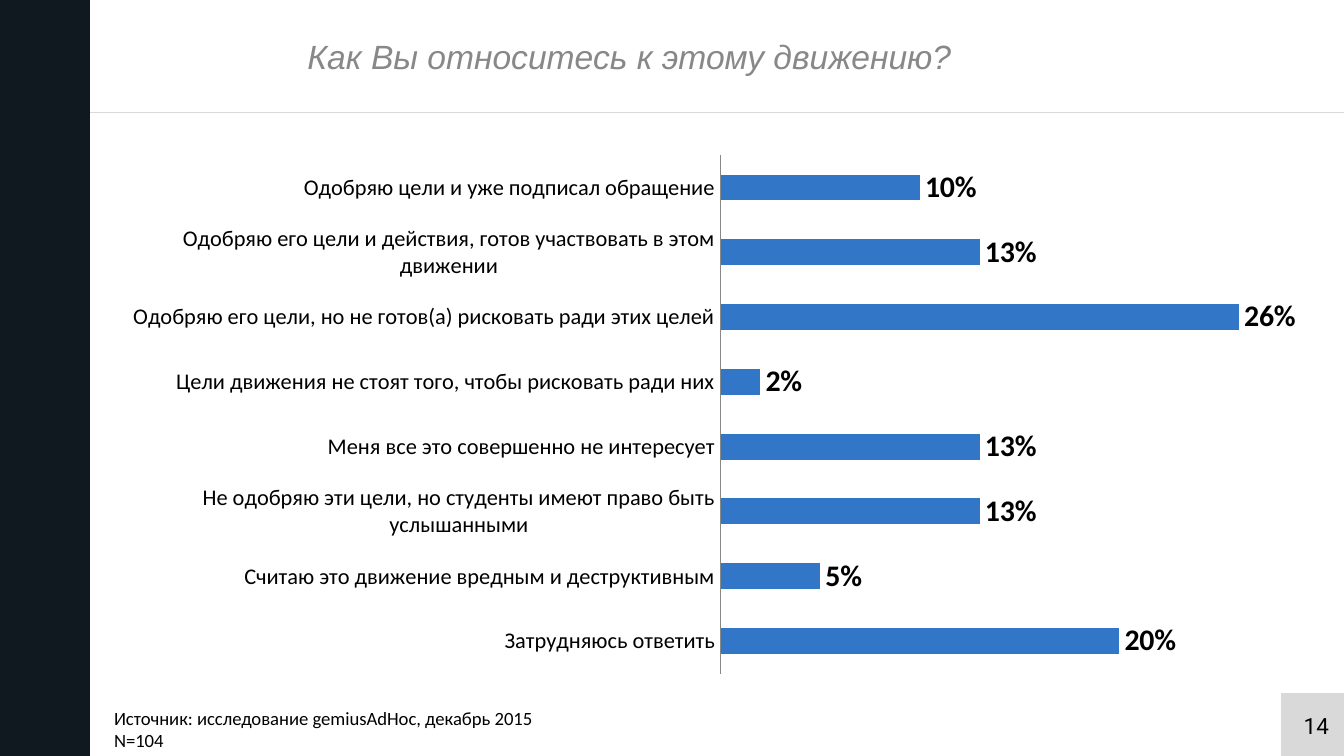
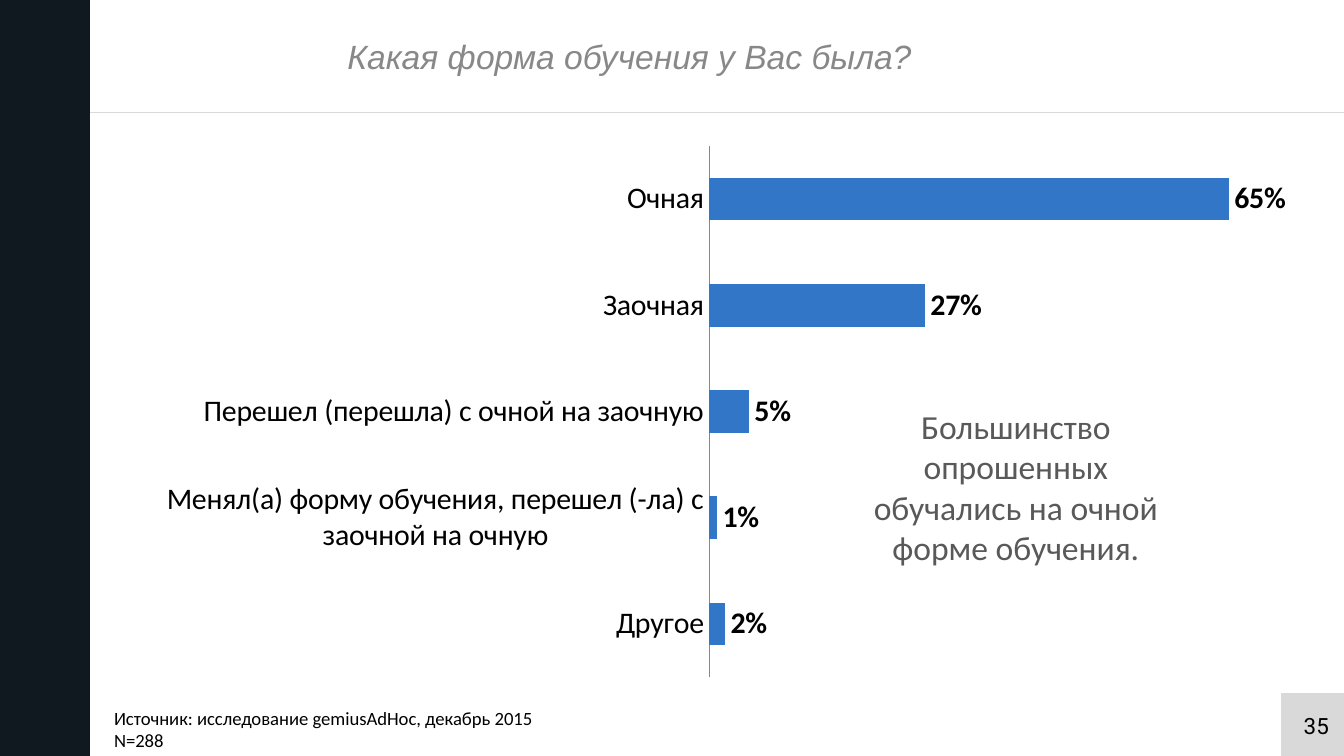
from lxml import etree
from pptx import Presentation
from pptx.chart.data import CategoryChartData
from pptx.dml.color import RGBColor
from pptx.enum.chart import XL_CHART_TYPE, XL_LABEL_POSITION, XL_TICK_MARK
from pptx.enum.shapes import MSO_CONNECTOR, MSO_SHAPE
from pptx.enum.text import MSO_ANCHOR, MSO_AUTO_SIZE, PP_ALIGN
from pptx.oxml import parse_xml
from pptx.oxml.ns import nsdecls, qn
from pptx.util import Pt

BARS = XL_CHART_TYPE.BAR_CLUSTERED
OUTSIDE = XL_LABEL_POSITION.OUTSIDE_END
NO_TICK = XL_TICK_MARK.NONE
STRAIGHT = MSO_CONNECTOR.STRAIGHT
RECT = MSO_SHAPE.RECTANGLE
PROCESS = MSO_SHAPE.FLOWCHART_PROCESS
MIDDLE = MSO_ANCHOR.MIDDLE
GROW = MSO_AUTO_SIZE.SHAPE_TO_FIT_TEXT
LEFT, CENTER, RIGHT = PP_ALIGN.LEFT, PP_ALIGN.CENTER, PP_ALIGN.RIGHT

WIDTH, HEIGHT = 720, 405
BAND, HEAD, TILE = 48.25, 60.5, 34
DARK, PALE, BLACK = "101820", "D9D9D9", "000000"
GREY, NOTE, BLUE = "888888", "595959", "3276C8"
SOURCE = "Источник: исследование gemiusAdHoc, декабрь 2015"
PERCENT = "####%"


def color(code):
    return RGBColor.from_string(code)


def points(box):
    return [Pt(value) for value in box]


def style(font, face, size, code):
    font.name, font.size = face, Pt(size)
    font.color.rgb = color(code)


def add_block(slide, kind, box, code):
    block = slide.shapes.add_shape(kind, *points(box))
    block.shadow.inherit = False
    block.fill.solid()
    block.fill.fore_color.rgb = color(code)
    block.line.fill.background()


def add_rule(slide, start, end):
    rule = slide.shapes.add_connector(STRAIGHT, *points(start + end))
    rule.line.color.rgb = color(PALE)
    rule.line.width = Pt(0.5)
    etree.SubElement(rule._element.spPr, qn("a:effectLst"))


def add_text(slide, box, lines, face, size, code, align=LEFT):
    frame = slide.shapes.add_textbox(*points(box)).text_frame
    frame.word_wrap = True
    frame.auto_size = GROW
    frame.text = "\n".join(lines)
    for line in frame.paragraphs:
        line.alignment = align
        style(line.font, face, size, code)


def add_title(slide, box, text):
    title = slide.shapes.title
    title.left, title.top, title.width, title.height = points(box)
    frame = title.text_frame
    frame.text = text
    frame.word_wrap = True
    frame.vertical_anchor = MIDDLE
    line = frame.paragraphs[0]
    line.alignment = CENTER
    style(line.font, "Arial", 18, GREY)
    line.font.italic = True


def place_plot(chart, plot):
    parts = "".join(f'<c:{tag}Mode val="edge"/>' for tag in "xy")
    parts += "".join(f'<c:{tag} val="{value}"/>' for tag, value in zip("xywh", plot))
    layout = parse_xml(
        f'<c:layout {nsdecls("c")}><c:manualLayout><c:layoutTarget val="inner"/>'
        f"{parts}</c:manualLayout></c:layout>")
    area = chart._chartSpace.chart.plotArea
    for old in area.findall(qn("c:layout")):
        area.remove(old)
    area.insert(0, layout)


def add_bars(slide, box, rows, plot, top, size):
    data = CategoryChartData(number_format=PERCENT)
    data.categories = [name for name, value in reversed(rows)]
    data.add_series("Series 1", [value / 100 for name, value in reversed(rows)])
    chart = slide.shapes.add_chart(BARS, *points(box), data).chart
    chart.has_legend = chart.has_title = False
    style(chart.font, "Calibri", 16, BLACK)

    names = chart.category_axis
    names.major_tick_mark = names.minor_tick_mark = NO_TICK
    names.format.line.color.rgb = color(GREY)
    names.format.line.width = Pt(0.75)
    style(names.tick_labels.font, "Calibri", size, BLACK)
    scale = chart.value_axis
    scale.visible = scale.has_major_gridlines = False
    scale.minimum_scale, scale.maximum_scale = 0, top

    group = chart.plots[0]
    group.gap_width, group.overlap = 150, -25
    group.vary_by_categories = False
    bars = group.series[0]
    bars.invert_if_negative = False
    bars.format.fill.solid()
    bars.format.fill.fore_color.rgb = color(BLUE)
    labels = bars.data_labels
    labels.show_value = True
    labels.number_format, labels.number_format_is_linked = PERCENT, False
    labels.position = OUTSIDE
    style(labels.font, "Calibri", 16, BLACK)
    labels.font.bold = True
    place_plot(chart, plot)


def add_page(deck, title, number, count):
    slide = deck.slides.add_slide(deck.slide_layouts[5])
    left, top = WIDTH - TILE, HEIGHT - TILE
    add_block(slide, RECT, (0, 0, BAND, HEIGHT), DARK)
    add_rule(slide, (BAND, HEAD), (WIDTH, HEAD))
    add_block(slide, PROCESS, (left, top, TILE, TILE), PALE)
    add_text(slide, (left, top + 7, TILE - 1, 30), [str(number)],
             "Roboto", 12, BLACK, RIGHT)
    add_title(slide, (82, 0, 510.5, HEAD), title)
    add_text(slide, (54, 375, 635, 32), [SOURCE, f"N={count}"],
             "Calibri", 10, BLACK)
    return slide


def add_views(deck):
    slide = add_page(deck, "Как Вы относитесь к этому движению?", 14, 104)
    rows = [
        ("Одобряю цели и уже подписал обращение", 10),
        ("Одобряю его цели и действия, готов участвовать в этом движении", 13),
        ("Одобряю его цели, но не готов(а) рисковать ради этих целей", 26),
        ("Цели движения не стоят того, чтобы рисковать ради них", 2),
        ("Меня все это совершенно не интересует", 13),
        ("Не одобряю эти цели, но студенты имеют право быть услышанными", 13),
        ("Считаю это движение вредным и деструктивным", 5),
        ("Затрудняюсь ответить", 20),
    ]
    add_bars(slide, (65.5, HEAD, 641, 323), rows, (0.5, 0.07, 0.5, 0.86), 0.3, 12)


def add_forms(deck):
    slide = add_page(deck, "Какая форма обучения у Вас была?", 35, 288)
    rows = [
        ("Очная", 65),
        ("Заочная", 27),
        ("Перешел (перешла) с очной на заочную", 5),
        ("Менял(а) форму обучения, перешел (-ла) с заочной на очную", 1),
        ("Другое", 2),
    ]
    add_bars(slide, (54, 66, 652, 306), rows, (0.5, 0.04, 0.46, 0.93), 0.7, 16)
    add_text(slide, (456.5, 214, 175.5, 94),
             ["Большинство опрошенных обучались на очной форме обучения."],
             "Calibri", 18, NOTE, CENTER)


def main():
    deck = Presentation()
    deck.slide_width, deck.slide_height = Pt(WIDTH), Pt(HEIGHT)
    add_views(deck)
    add_forms(deck)
    deck.save("out.pptx")


if __name__ == "__main__":
    main()
